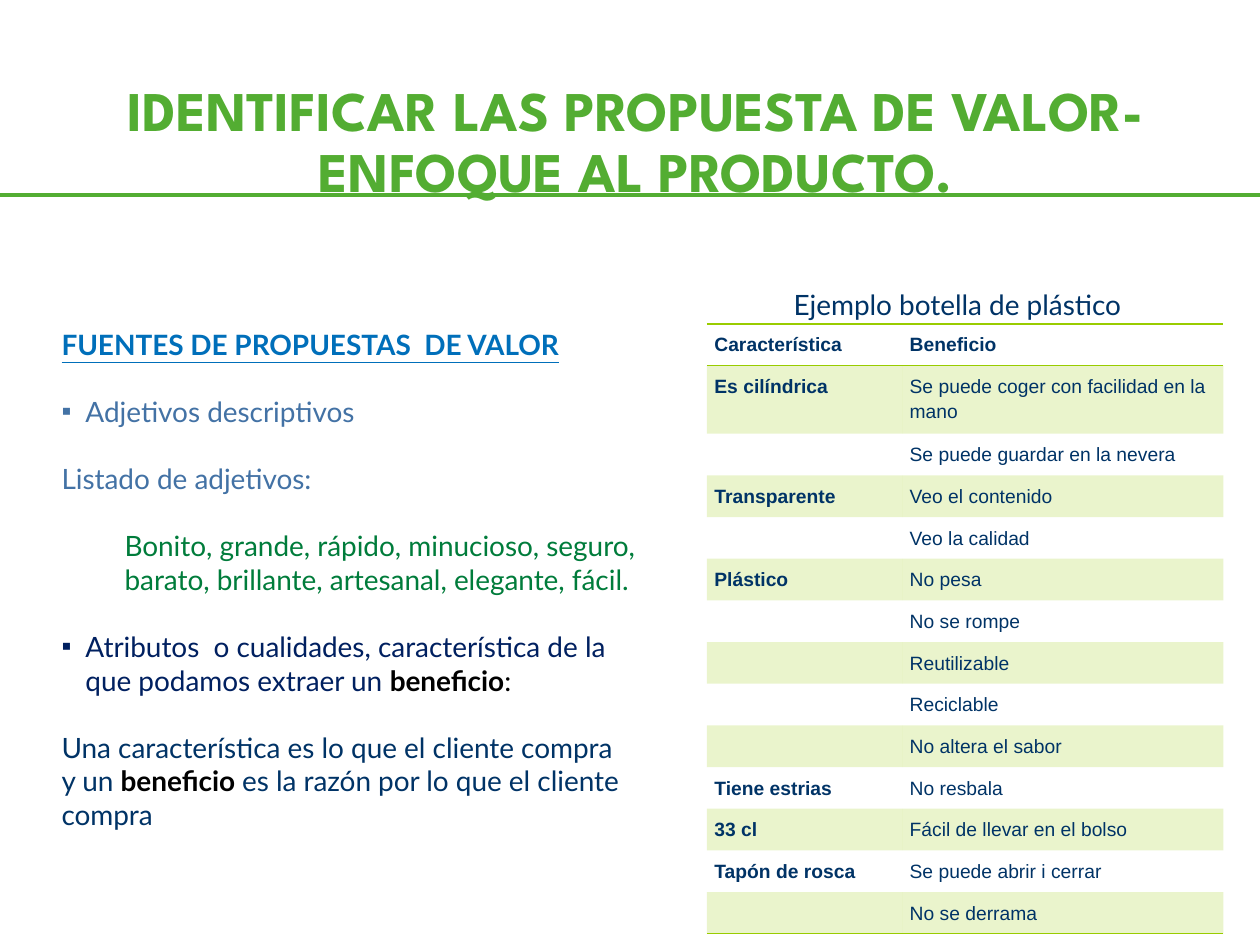
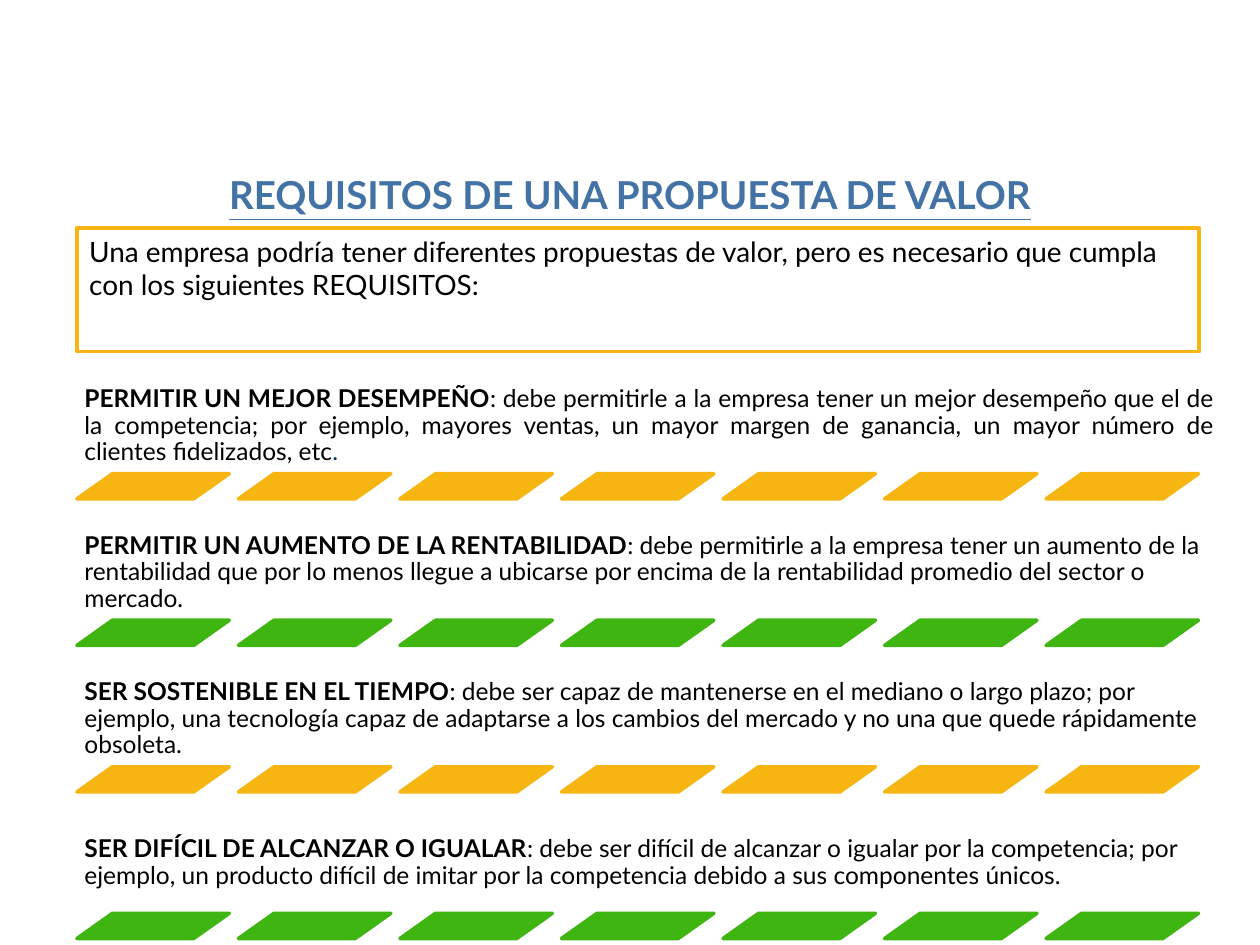
from dataclasses import dataclass

from lxml.etree import SubElement
from pptx import Presentation
from pptx.dml.color import RGBColor
from pptx.enum.shapes import MSO_CONNECTOR, MSO_SHAPE
from pptx.enum.text import MSO_ANCHOR, PP_ALIGN
from pptx.oxml.ns import qn
from pptx.util import Inches, Pt


@dataclass(frozen=True)
class Theme:
    # Colours
    title_green: str = "53AD32"
    band_green: str = "3FB512"
    amber: str = "F7B512"
    table_green: str = "99CC00"
    example_green: str = "007C3B"
    link_blue: str = "006FBA"
    steel_blue: str = "4372A5"
    navy: str = "003366"
    deep_navy: str = "002060"
    black: str = "000000"
    # Fonts and sizes
    title_font: str = "League Spartan"
    body_font: str = "Lato"
    table_font: str = "Arial"
    title_size: float = 32
    heading_size: float = 22
    body_size: float = 16
    requirement_size: float = 14
    table_size: float = 11


THEME = Theme()
COLUMNS, ROWS = 100, 75  # square grid over the slide, ten cells to the inch

SOURCES = [
    dict(runs=["FUENTES DE PROPUESTAS  DE VALOR"], color=THEME.link_blue,
         bold=True, underline=True, line_spacing=1.8),
    dict(runs=["Adjetivos descriptivos"], color=THEME.steel_blue, bullet=True, gap=True),
    dict(runs=["Listado de adjetivos:"], color=THEME.steel_blue, gap=True),
    dict(runs=["Bonito, grande, rápido, minucioso, seguro, barato, brillante, "
               "artesanal, elegante, fácil."],
         color=THEME.example_green, indent=5, gap=True),
    dict(runs=["Atributos  o cualidades, característica de la que podamos extraer un ",
               ("beneficio", THEME.black, True), (":", THEME.black, False)],
         color=THEME.deep_navy, bullet=True, gap=True),
    dict(runs=["Una característica es lo que el cliente compra"], color=THEME.navy, gap=True),
    dict(runs=["y un ", ("beneficio ", THEME.black, True),
               "es la razón por lo que el cliente compra"], color=THEME.navy),
]

BOTTLE = [
    ("Característica", "Beneficio"),
    ("Es cilíndrica", "Se puede coger con facilidad en la mano"),
    ("", "Se puede guardar en la nevera"),
    ("Transparente", "Veo el contenido"),
    ("", "Veo la calidad"),
    ("Plástico", "No pesa"),
    ("", "No se rompe"),
    ("", "Reutilizable"),
    ("", "Reciclable"),
    ("", "No altera el sabor"),
    ("Tiene estrias", "No resbala"),
    ("33 cl", "Fácil de llevar en el bolso"),
    ("Tapón de rosca", "Se puede abrir i cerrar"),
    ("", "No se derrama"),
]

REQUIREMENTS = [
    ("PERMITIR UN MEJOR DESEMPEÑO",
     ": debe permitirle a la empresa tener un mejor desempeño que el de la competencia; "
     "por ejemplo, mayores ventas, un mayor margen de ganancia, un mayor número de "
     "clientes fidelizados, etc", (".", THEME.navy, False)),
    ("PERMITIR UN AUMENTO DE LA RENTABILIDAD",
     ": debe permitirle a la empresa tener un aumento de la rentabilidad que por lo menos "
     "llegue a ubicarse por encima de la rentabilidad promedio del sector o mercado."),
    ("SER SOSTENIBLE EN EL TIEMPO",
     ": debe ser capaz de mantenerse en el mediano o largo plazo; por ejemplo, una "
     "tecnología capaz de adaptarse a los cambios del mercado y no una que quede "
     "rápidamente obsoleta."),
    ("SER DIFÍCIL DE ALCANZAR O IGUALAR",
     ": debe ser difícil de alcanzar o igualar por la competencia; por ejemplo, un "
     "producto difícil de imitar por la competencia debido a sus componentes únicos."),
]


def grid(*cells):
    return [Inches(cell / 10) for cell in cells]


def rgb(color):
    return RGBColor.from_string(color)


def add_bullet(paragraph, color):
    properties = paragraph._p.get_or_add_pPr()
    bullet_color = SubElement(properties, qn("a:buClr"))
    SubElement(bullet_color, qn("a:srgbClr"), val=color)
    SubElement(properties, qn("a:buFont"), typeface=THEME.table_font)
    SubElement(properties, qn("a:buChar"), char="▪")


def indent_paragraph(paragraph, left, first=0):
    properties = paragraph._p.get_or_add_pPr()
    properties.set("marL", str(grid(left)[0]))
    properties.set("indent", str(grid(first)[0]))


def write(paragraph, runs, size, color, font=THEME.body_font, bold=False, underline=False,
          align=PP_ALIGN.LEFT, line_spacing=1.0, bullet=False, indent=0, gap=False):
    """A run is a string, or (text, colour, bold) where it differs from the paragraph."""
    paragraph.alignment = align
    paragraph.line_spacing = line_spacing
    if gap:
        paragraph.space_before = Pt(size * 1.2)
    if bullet:
        indent_paragraph(paragraph, 1.9, -1.9)
        add_bullet(paragraph, color)
    elif indent:
        indent_paragraph(paragraph, indent)
    style = paragraph.font
    style.name, style.size, style.bold, style.underline = font, Pt(size), bold, underline
    style.color.rgb = rgb(color)
    for item in runs:
        run = paragraph.add_run()
        if isinstance(item, tuple):
            run.text, run_color, run.font.bold = item
            run.font.color.rgb = rgb(run_color)
        else:
            run.text = item


def add_text(slide, area, paragraphs, anchor=MSO_ANCHOR.TOP, margin=None):
    frame = slide.shapes.add_textbox(*grid(*area)).text_frame
    frame.word_wrap = True
    frame.vertical_anchor = anchor
    if margin:
        set_margins(frame, margin)
    for index, settings in enumerate(paragraphs):
        paragraph = frame.add_paragraph() if index else frame.paragraphs[0]
        write(paragraph, **settings)


def set_margins(holder, margin):
    width = grid(margin)[0]
    holder.margin_left = holder.margin_right = width
    holder.margin_top = holder.margin_bottom = width


def add_rule(slide, row):
    rule = slide.shapes.add_connector(MSO_CONNECTOR.STRAIGHT, *grid(0, row, COLUMNS, row))
    rule.line.color.rgb = rgb(THEME.title_green)
    rule.line.width = Pt(2.25)
    SubElement(rule._element.spPr, qn("a:effectLst"))


def add_outlined(slide, kind, area, color, width, filled):
    shape = slide.shapes.add_shape(kind, *grid(*area))
    shape.shadow.inherit = False
    shape.line.color.rgb = rgb(color)
    shape.line.width = Pt(width)
    if filled:
        shape.fill.solid()
        shape.fill.fore_color.rgb = rgb(color)
    else:
        shape.fill.background()
    return shape


def add_band(slide, row, color, count=7, left=6.1, step=12.82):
    for index in range(count):
        area = (left + index * step, row, 12.1, 2)
        piece = add_outlined(slide, MSO_SHAPE.PARALLELOGRAM, area, color, 2, True)
        piece.adjustments[0] = 1.41


def add_border(cell, side):
    line = SubElement(cell._tc.get_or_add_tcPr(), qn(f"a:{side}"), w=str(Pt(1)))
    fill = SubElement(line, qn("a:solidFill"))
    SubElement(fill, qn("a:srgbClr"), val=THEME.table_green)


def shade(cell):
    cell.fill.solid()
    cell.fill.fore_color.rgb = rgb(THEME.table_green)
    color = cell._tc.tcPr.find(f"{qn('a:solidFill')}/{qn('a:srgbClr')}")
    SubElement(color, qn("a:alpha"), val="20000")


def add_benefit_table(slide, area, widths, rows):
    frame = slide.shapes.add_table(len(rows), len(widths), *grid(*area))
    table = frame.table
    table.first_row = table.horz_banding = False
    style = table._tbl.tblPr.find(qn("a:tableStyleId"))
    style.text = "{2D5ABB26-0587-4C30-8999-92F81FD0307C}"  # no style, no grid
    for column, width in zip(table.columns, grid(*widths)):
        column.width = width
    for row_index, texts in enumerate(rows):
        table.rows[row_index].height = grid(5 if row_index == 1 else 3)[0]
        for column_index, text in enumerate(texts):
            cell = table.cell(row_index, column_index)
            set_margins(cell, 0.6)
            paragraph = cell.text_frame.paragraphs[0]
            write(paragraph, [text] if text else [], THEME.table_size, THEME.navy,
                  THEME.table_font, bold=row_index == 0 or column_index == 0,
                  line_spacing=1.15)
            if not text:
                paragraph._p.get_or_add_endParaRPr().set("sz", str(THEME.table_size * 100))
            if row_index == 0:
                add_border(cell, "lnT")
            if row_index in (0, len(rows) - 1):
                add_border(cell, "lnB")
            if row_index % 2:
                shade(cell)
            else:
                cell.fill.background()


def build_product_slide(slide):
    # Sources of value
    add_text(slide, (3.9, 21.8, 47.7, 46.2),
             [dict(size=THEME.body_size, **source) for source in SOURCES], MSO_ANCHOR.MIDDLE)
    # Bottle example
    add_benefit_table(slide, (56.1, 25.7, 41, 44), (15.5, 25.5), BOTTLE)
    add_text(slide, (62, 20.2, 29.5, 5.1),
             [dict(runs=["Ejemplo botella de plástico"], size=THEME.body_size,
                   color=THEME.navy, line_spacing=1.8)])
    # Title and rule
    add_text(slide, (3.4, 6, 94.2, 10.8),
             [dict(runs=["IDENTIFICAR LAS PROPUESTA DE VALOR-ENFOQUE AL PRODUCTO."],
                   size=THEME.title_size, color=THEME.title_green, font=THEME.title_font,
                   bold=True, align=PP_ALIGN.CENTER, line_spacing=0.9)],
             MSO_ANCHOR.MIDDLE)
    add_rule(slide, 15.5)


def build_requirements_slide(slide):
    # Heading and framed introduction
    add_text(slide, (4.7, 13.1, 90.6, 6.3),
             [dict(runs=["REQUISITOS DE UNA PROPUESTA DE VALOR"], size=THEME.heading_size,
                   color=THEME.steel_blue, bold=True, underline=True,
                   align=PP_ALIGN.CENTER)])
    introduction = add_outlined(slide, MSO_SHAPE.RECTANGLE, (6.1, 18.1, 89.1, 9.8),
                                THEME.amber, 2.25, False)
    introduction.text_frame.word_wrap = True
    introduction.text_frame.vertical_anchor = MSO_ANCHOR.TOP
    write(introduction.text_frame.paragraphs[0],
          ["Una empresa podría tener diferentes propuestas de valor, pero es necesario "
           "que cumpla con los siguientes REQUISITOS:"], THEME.body_size, THEME.black)
    # Requirements, each above its band
    last = len(REQUIREMENTS) - 1
    for index, (name, *explanation) in enumerate(REQUIREMENTS):
        band_row = 37.6 + index * 11.63
        text_row = band_row - (9.6 if index == last else 8.3)
        add_text(slide, (6.1, text_row, 90.9, 8.3),
                 [dict(runs=[(name, THEME.black, True), *explanation],
                       size=THEME.requirement_size, color=THEME.black, line_spacing=0.9,
                       align=PP_ALIGN.LEFT if index else PP_ALIGN.JUSTIFY)],
                 MSO_ANCHOR.BOTTOM, margin=0.6)
        add_band(slide, band_row, THEME.band_green if index % 2 else THEME.amber)


def main():
    presentation = Presentation()
    presentation.slide_width, presentation.slide_height = grid(COLUMNS, ROWS)
    blank = presentation.slide_layouts[6]
    for build in (build_product_slide, build_requirements_slide):
        build(presentation.slides.add_slide(blank))
    presentation.save("out.pptx")


if __name__ == "__main__":
    main()
